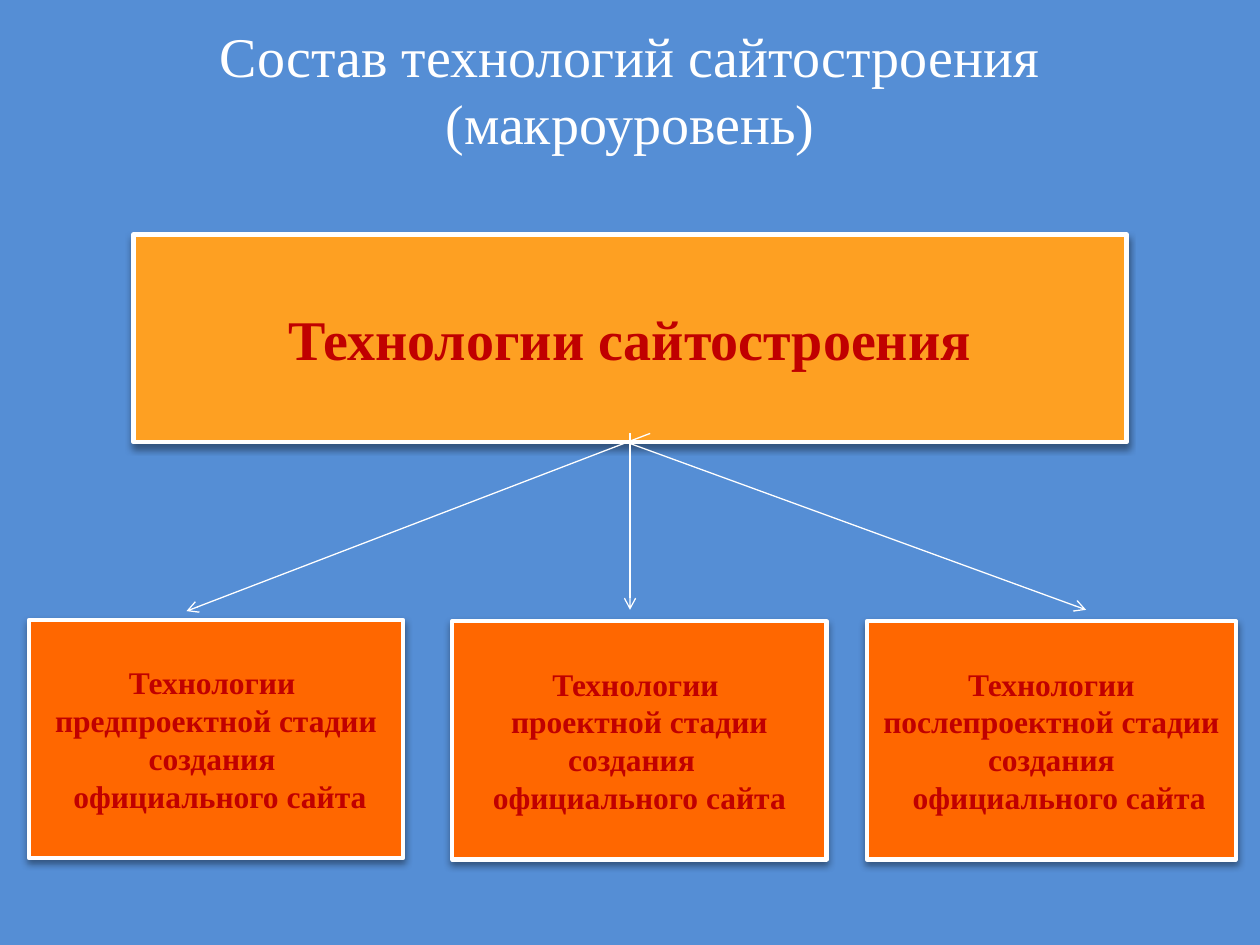
from dataclasses import dataclass

from lxml.etree import SubElement
from pptx import Presentation
from pptx.dml.color import RGBColor
from pptx.enum.shapes import MSO_CONNECTOR as Connector, MSO_SHAPE as Shape
from pptx.enum.text import MSO_ANCHOR as Anchor, PP_ALIGN as Align
from pptx.oxml import parse_xml
from pptx.oxml.ns import nsdecls, qn
from pptx.util import Inches, Pt


@dataclass(frozen=True)
class Theme:
    background: RGBColor = RGBColor.from_string("558ED5")
    white: RGBColor = RGBColor.from_string("FFFFFF")
    root_fill: RGBColor = RGBColor.from_string("FEA022")
    stage_fill: RGBColor = RGBColor.from_string("FF6700")
    label: RGBColor = RGBColor.from_string("C00000")
    font: str = "Times New Roman"
    large: Pt = Pt(32)
    small: Pt = Pt(18)
    border: Pt = Pt(2.5)
    arrow: Pt = Pt(0.75)


theme = Theme()
SHADOW = (
    f'<a:effectLst {nsdecls("a")}>'
    f'<a:outerShdw blurRad="{Pt(4.1)}" dist="{Pt(2)}" dir="5400000" rotWithShape="0">'
    '<a:srgbClr val="000000"><a:alpha val="40000"/></a:srgbClr>'
    "</a:outerShdw></a:effectLst>"
)


def write_centred(holder, text, size, color, bold=False):
    frame = holder.text_frame
    frame.word_wrap = True
    frame.vertical_anchor = Anchor.MIDDLE
    frame.text = text
    for paragraph in frame.paragraphs:
        paragraph.alignment = Align.CENTER
        paragraph.font.name = theme.font
        paragraph.font.size = size
        paragraph.font.bold = bold
        paragraph.font.color.rgb = color


def add_process(left, top, width, height, fill, text, size):
    """Add a white-bordered process box with a soft shadow below it."""
    box = slide.shapes.add_shape(
        Shape.FLOWCHART_PROCESS, Inches(left), Inches(top), Inches(width), Inches(height)
    )
    box.fill.solid()
    box.fill.fore_color.rgb = fill
    box.line.color.rgb = theme.white
    box.line.width = theme.border
    box._element.spPr.append(parse_xml(SHADOW))
    write_centred(box, text, size, theme.label, bold=True)


deck = Presentation()
deck.slide_width, deck.slide_height = Inches(10), Inches(7.5)
slide = deck.slides.add_slide(deck.slide_layouts[6])
slide.background.fill.solid()
slide.background.fill.fore_color.rgb = theme.background

title = slide.shapes.add_textbox(Inches(0.5), Inches(0.08), Inches(9), Inches(1.25))
write_centred(
    title, "Состав технологий сайтостроения\v(макроуровень)", theme.large, theme.white
)

add_process(1.06, 1.86, 7.88, 1.65, theme.root_fill, "Технологии сайтостроения", theme.large)

stages = [
    (0.23, 4.92, 2.97, "Технологии  предпроектной стадии создания \n официального сайта"),
    (3.59, 4.93, 2.97, "Технологии \nпроектной стадии создания  \nофициального сайта"),
    (6.88, 4.93, 2.93, "Технологии послепроектной стадии создания\n  официального сайта"),
]
for left, top, width, text in stages:
    add_process(left, top, width, 1.89, theme.stage_fill, text, theme.small)

branches = [
    (5.16, 3.44, 1.48, 4.85),
    (5, 3.52, 8.62, 4.84),
    (5, 3.44, 5, 4.84),
]
for ends in branches:
    branch = slide.shapes.add_connector(Connector.STRAIGHT, *map(Inches, ends))
    branch.line.color.rgb = theme.white
    branch.line.width = theme.arrow
    SubElement(branch.line._get_or_add_ln(), qn("a:tailEnd"), type="arrow")
    SubElement(branch._element.spPr, qn("a:effectLst"))

deck.save("out.pptx")
